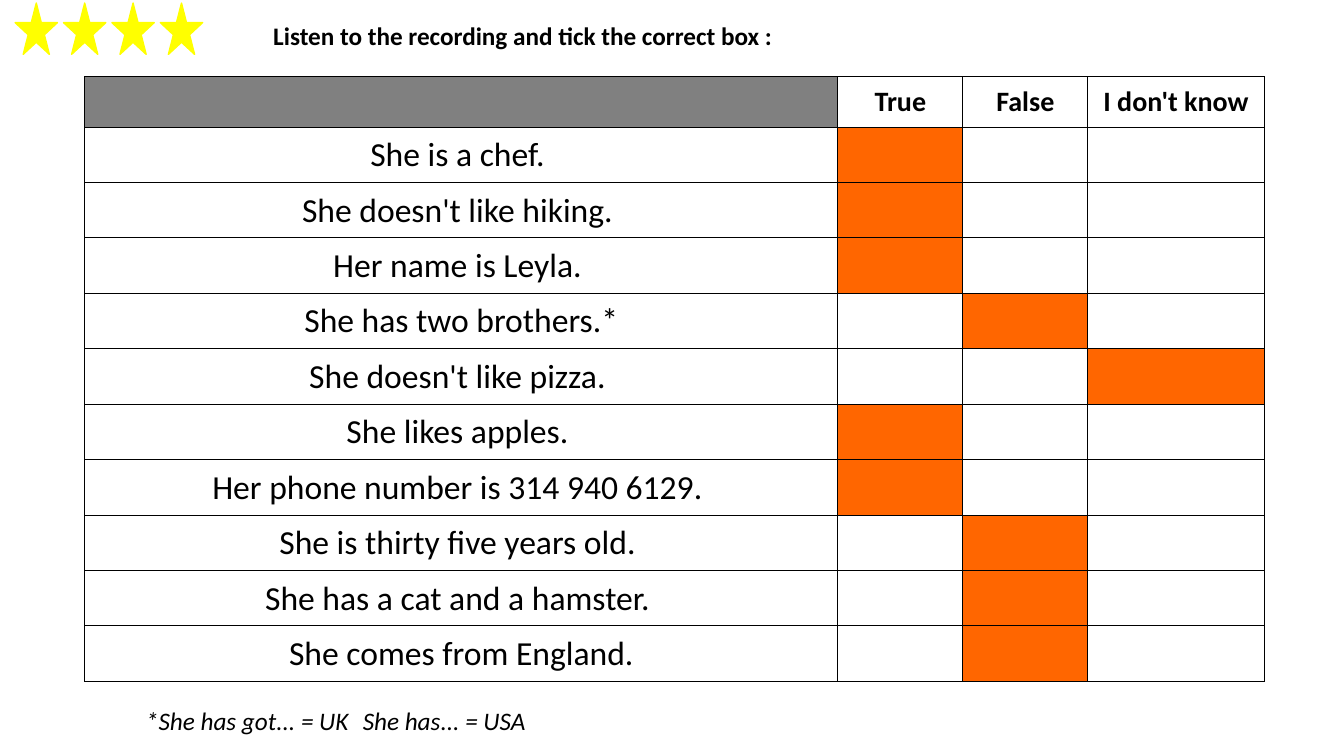
from lxml import etree
from pptx import Presentation
from pptx.dml.color import RGBColor
from pptx.enum.shapes import MSO_SHAPE
from pptx.enum.text import MSO_ANCHOR, PP_ALIGN
from pptx.oxml.ns import qn
from pptx.util import Inches, Pt

STAR = MSO_SHAPE.STAR_5_POINT
MIDDLE = MSO_ANCHOR.MIDDLE
LEFT, CENTER = PP_ALIGN.LEFT, PP_ALIGN.CENTER

TITLE = "Listen to the recording and tick the correct box :"
HEADS = ["True", "False", "I don't know"]
ROWS = [
    ("She is a chef. ", "True"),
    ("She doesn't like hiking. ", "True"),
    ("Her name is Leyla. ", "True"),
    ("She has two brothers.*", "False"),
    ("She doesn't like pizza. ", "I don't know"),
    ("She likes apples. ", "True"),
    ("Her phone number is 314 940 6129. ", "True"),
    ("She is thirty five years old. ", "False"),
    ("She has a cat and a hamster. ", "False"),
    ("She comes from England.", "False"),
]
NOTE = "*She has got... = UK\tShe has... = USA"
COLORS = {"ink": "000000", "paper": "FFFFFF", "head": "808080",
          "tick": "FF6600", "star": "FFFF00"}
WIDTHS = [7.47, 1.24, 1.24, 1.75]
HEAD_H, ROW_H = 0.5, 0.55
STARS = 4
FONTS = {
    "title": {"size": Pt(18), "bold": True},
    "head": {"size": Pt(20), "bold": True},
    "row": {"size": Pt(24), "bold": False},
    "note": {"size": Pt(18), "italic": True},
}


def color(name):
    return RGBColor.from_string(COLORS[name])


def write(frame, text, style, align):
    para = frame.paragraphs[0]
    para.alignment = align
    run = para.add_run()
    run.text = text
    run.font.name = "Calibri"
    run.font.color.rgb = color("ink")
    for key, value in FONTS[style].items():
        setattr(run.font, key, value)


def place(shape, left, top, width, height):
    box = {"left": left, "top": top, "width": width, "height": height}
    for key, value in box.items():
        setattr(shape, key, Inches(value))


def border(cell):
    props = cell._tc.get_or_add_tcPr()
    for spot, side in enumerate(("lnL", "lnR", "lnT", "lnB")):
        line = etree.Element(qn("a:" + side), w=str(Pt(0.75)))
        fill = etree.SubElement(line, qn("a:solidFill"))
        etree.SubElement(fill, qn("a:srgbClr"), val=COLORS["ink"])
        props.insert(spot, line)


def paint(cell, fill, text="", style="row"):
    cell.fill.solid()
    cell.fill.fore_color.rgb = color(fill)
    border(cell)
    cell.vertical_anchor = MIDDLE
    margins = {"margin_left": 0.01, "margin_right": 0.01,
               "margin_top": 0.01, "margin_bottom": 0}
    for key, value in margins.items():
        setattr(cell, key, Inches(value))
    if text:
        write(cell.text_frame, text, style, CENTER)


def add_title(slide):
    title = slide.shapes.title
    place(title, 2.61, 0.15, 5.25, 0.4)
    title.text_frame.word_wrap = False
    title.text_frame.vertical_anchor = MIDDLE
    write(title.text_frame, TITLE, "title", LEFT)


def add_quiz(slide):
    frame = slide.shapes.add_table(
        len(ROWS) + 1, len(WIDTHS), Inches(0.84), Inches(0.76),
        Inches(sum(WIDTHS)), Inches(HEAD_H + ROW_H * len(ROWS)))
    table = frame.table
    table.first_row = table.horz_banding = False
    for col, width in zip(table.columns, WIDTHS):
        col.width = Inches(width)
    for num, row in enumerate(table.rows):
        row.height = Inches(ROW_H if num else HEAD_H)

    paint(table.cell(0, 0), "head")
    for col, head in enumerate(HEADS, 1):
        paint(table.cell(0, col), "paper", head, "head")
    for num, (claim, answer) in enumerate(ROWS, 1):
        paint(table.cell(num, 0), "paper", claim)
        for col, head in enumerate(HEADS, 1):
            paint(table.cell(num, col), "tick" if head == answer else "paper")


def add_note(slide):
    box = slide.shapes.add_textbox(
        Inches(1.35), Inches(6.95), Inches(4.1), Inches(0.4))
    box.text_frame.word_wrap = True
    write(box.text_frame, NOTE, "note", LEFT)
    props = box.text_frame.paragraphs[0]._p.get_or_add_pPr()
    tabs = etree.SubElement(props, qn("a:tabLst"))
    etree.SubElement(tabs, qn("a:tab"), pos=str(Inches(2.15)), algn="l")


def add_stars(slide):
    for num in range(STARS):
        star = slide.shapes.add_shape(
            STAR, Inches(0.15 + 0.48 * num), Inches(0.03),
            Inches(0.42), Inches(0.51))
        star.shadow.inherit = False
        star.fill.solid()
        star.fill.fore_color.rgb = color("star")
        star.line.color.rgb = color("star")
        star.line.width = Pt(1)


def main():
    deck = Presentation()
    deck.slide_width, deck.slide_height = Inches(13.33), Inches(7.5)
    slide = deck.slides.add_slide(deck.slide_layouts[5])
    add_title(slide)
    add_quiz(slide)
    add_note(slide)
    add_stars(slide)
    deck.save("out.pptx")


if __name__ == "__main__":
    main()
